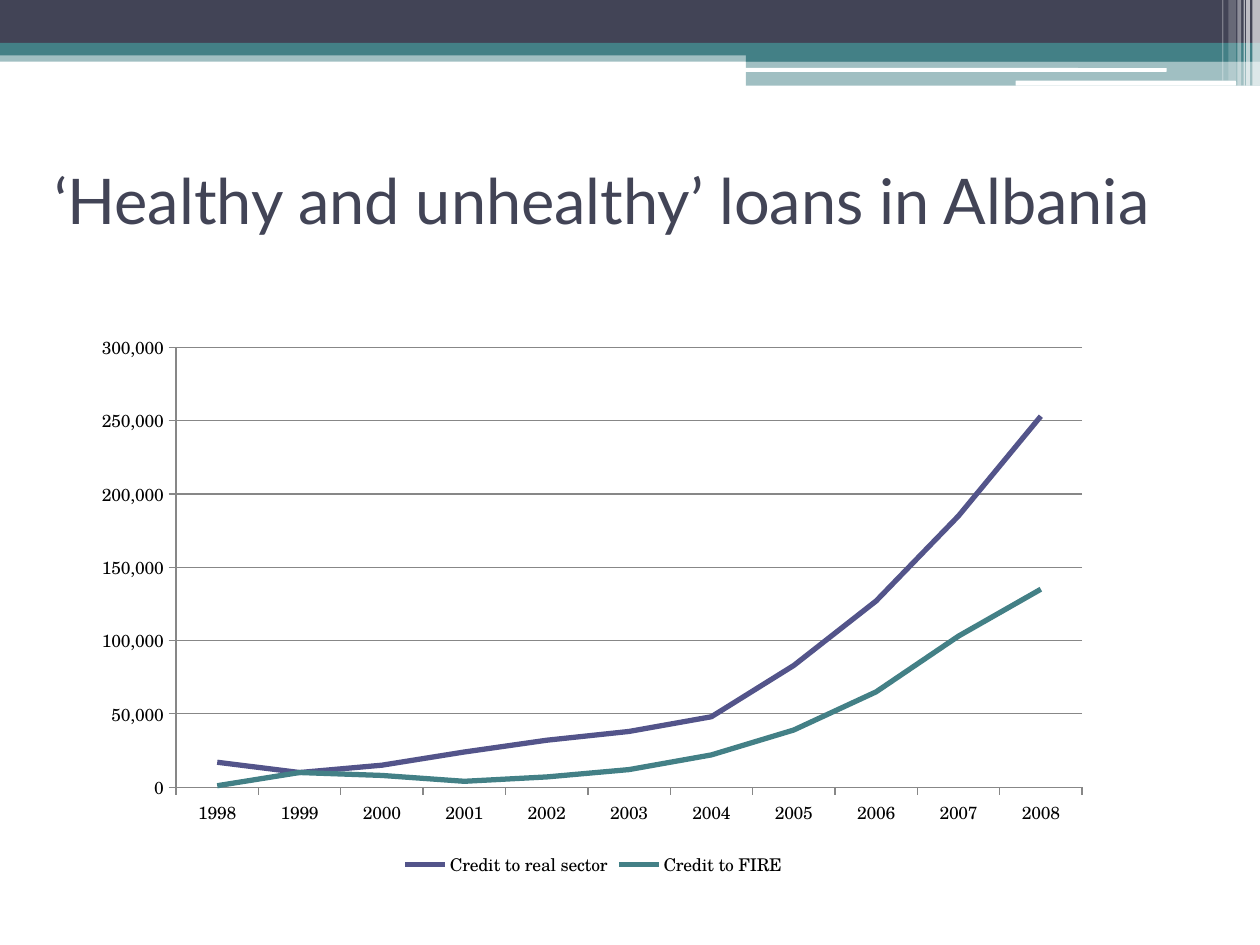
import dataclasses

import pptx
import pptx.chart.data
import pptx.dml.color
import pptx.enum.chart
import pptx.enum.shapes
import pptx.enum.text
import pptx.oxml
import pptx.oxml.ns
import pptx.util
from pptx.util import Inches

SHAPE = pptx.enum.shapes.MSO_SHAPE


@dataclasses.dataclass(frozen=True)
class Theme:
    dark: str = "424456"
    teal: str = "438086"
    violet: str = "53548A"
    white: str = "FFFFFF"
    black: str = "000000"
    grid: str = "878787"
    title_font: str = "Lato"
    chart_font: str = "TeX Gyre Schola"
    title_size: int = 36
    chart_size: int = 10
    series_width: float = 3
    axis_width: float = 0.75


THEME = Theme()
YEARS = [str(year) for year in range(1998, 2009)]
LOANS = [
    ("Credit to real sector", THEME.violet,
     [17000, 10000, 15000, 24000, 32000, 38000, 48000, 83000, 127000, 185000, 253000]),
    ("Credit to FIRE", THEME.teal,
     [1000, 10000, 8000, 4000, 7000, 12000, 22000, 39000, 65000, 103000, 135000]),
]


def rgb(color):
    return pptx.dml.color.RGBColor.from_string(color)


def add_bar(s, box, color, opacity=100, kind=SHAPE.RECTANGLE):
    sp = s.shapes.add_shape(kind, *map(Inches, box))
    sp.shadow.inherit = False
    sp.fill.solid()
    sp.fill.fore_color.rgb = rgb(color)
    sp.line.fill.background()
    if opacity < 100:
        clr = sp.fill._xPr.find(".//" + pptx.oxml.ns.qn("a:srgbClr"))
        alpha = pptx.oxml.parse_xml(
            f'<a:alpha {pptx.oxml.ns.nsdecls("a")} val="{opacity * 1000}"/>')
        clr.append(alpha)
    return sp


def write_text(tf, text, font, size, color, align=pptx.enum.text.PP_ALIGN.LEFT):
    p = tf.paragraphs[0]
    p.alignment = align
    r = p.add_run()
    r.text = text
    r.font.name = font
    r.font.size = pptx.util.Pt(size)
    r.font.color.rgb = rgb(color)


def add_header(s, box):
    x, y, w, h = box
    right = x + w
    panel = x + 5.92
    bars = [
        (x, 0.4, w, 0.09, THEME.teal, 50),
        (x, 0, w, 0.34, THEME.dark, 100),
        (x, 0.34, w, 0.1, THEME.teal, 100),
        (panel, 0.39, right - panel, 0.1, THEME.teal, 100),
        (panel, 0.48, right - panel, 0.2, THEME.teal, 50),
    ]
    for left, top, width, height, color, opacity in bars:
        add_bar(s, (left, y + top, width, height), color, opacity)

    for left, top, width, height in [(5.91, 0.54, 3.35, 0.03), (8.06, 0.64, 1.75, 0.04)]:
        add_bar(s, (x + left, y + top, width, height), THEME.white,
                kind=SHAPE.ROUNDED_RECTANGLE)

    stripes = [
        (0.06, 0.06, h, 65),
        (0.11, 0.03, h, 65),
        (0.13, 0.01, h, 60),
        (0.18, 0.03, h, 40),
        (0.25, 0.06, h - 0.04, 20),
        (0.3, 0.01, h - 0.04, 30),
    ]
    for offset, width, height, opacity in stripes:
        add_bar(s, (right - offset, y, width, height), THEME.white, opacity)


def add_title(s, box, text):
    sp = s.shapes.title
    sp.left, sp.top, sp.width, sp.height = map(Inches, box)
    tf = sp.text_frame
    tf.word_wrap = True
    tf.vertical_anchor = pptx.enum.text.MSO_ANCHOR.MIDDLE
    write_text(tf, text, THEME.title_font, THEME.title_size, THEME.dark)


def format_line(line, color, width):
    line.color.rgb = rgb(color)
    line.width = pptx.util.Pt(width)


def place_plot(chart, x, y, w, h):
    plot_area = chart._chartSpace.chart.plotArea
    for old in plot_area.findall(pptx.oxml.ns.qn("c:layout")):
        plot_area.remove(old)
    plot_area.insert(0, pptx.oxml.parse_xml(
        f'<c:layout {pptx.oxml.ns.nsdecls("c")}><c:manualLayout>'
        '<c:layoutTarget val="inner"/><c:xMode val="edge"/><c:yMode val="edge"/>'
        f'<c:x val="{x}"/><c:y val="{y}"/><c:w val="{w}"/><c:h val="{h}"/>'
        '</c:manualLayout></c:layout>'))


def add_loan_chart(s, box):
    data = pptx.chart.data.CategoryChartData(number_format="#,##0")
    data.categories = YEARS
    for name, _, values in LOANS:
        data.add_series(name, values)
    chart = s.shapes.add_chart(
        pptx.enum.chart.XL_CHART_TYPE.LINE, *map(Inches, box), data).chart
    chart.has_title = False
    chart.font.name = THEME.chart_font
    chart.font.size = pptx.util.Pt(THEME.chart_size)
    chart.font.color.rgb = rgb(THEME.black)

    chart.has_legend = True
    chart.legend.position = pptx.enum.chart.XL_LEGEND_POSITION.BOTTOM
    chart.legend.include_in_layout = False

    plot = chart.plots[0]
    plot.vary_by_categories = False
    for series, (_, color, _) in zip(plot.series, LOANS):
        series.smooth = False
        series.marker.style = pptx.enum.chart.XL_MARKER_STYLE.NONE
        format_line(series.format.line, color, THEME.series_width)

    for axis in (chart.category_axis, chart.value_axis):
        axis.major_tick_mark = pptx.enum.chart.XL_TICK_MARK.OUTSIDE
        axis.minor_tick_mark = pptx.enum.chart.XL_TICK_MARK.NONE
        format_line(axis.format.line, THEME.grid, THEME.axis_width)

    axis = chart.value_axis
    axis.minimum_scale, axis.maximum_scale, axis.major_unit = 0, 300000, 50000
    axis.has_major_gridlines = True
    format_line(axis.major_gridlines.format.line, THEME.grid, THEME.axis_width)
    axis.tick_labels.number_format = "#,##0"
    axis.tick_labels.number_format_is_linked = False
    place_plot(chart, 0.09, 0.04, 0.89, 0.79)


def main():
    prs = pptx.Presentation()
    prs.slide_width, prs.slide_height = Inches(10), Inches(7.5)
    s = prs.slides.add_slide(prs.slide_layouts[5])
    add_header(s, (0, 0, 10, 0.68))
    add_title(s, (0.33, 1, 9.5, 1.17), "‘Healthy and unhealthy’ loans in Albania")
    add_loan_chart(s, (0.67, 2.58, 8.08, 4.42))
    prs.save("out.pptx")


if __name__ == "__main__":
    main()
